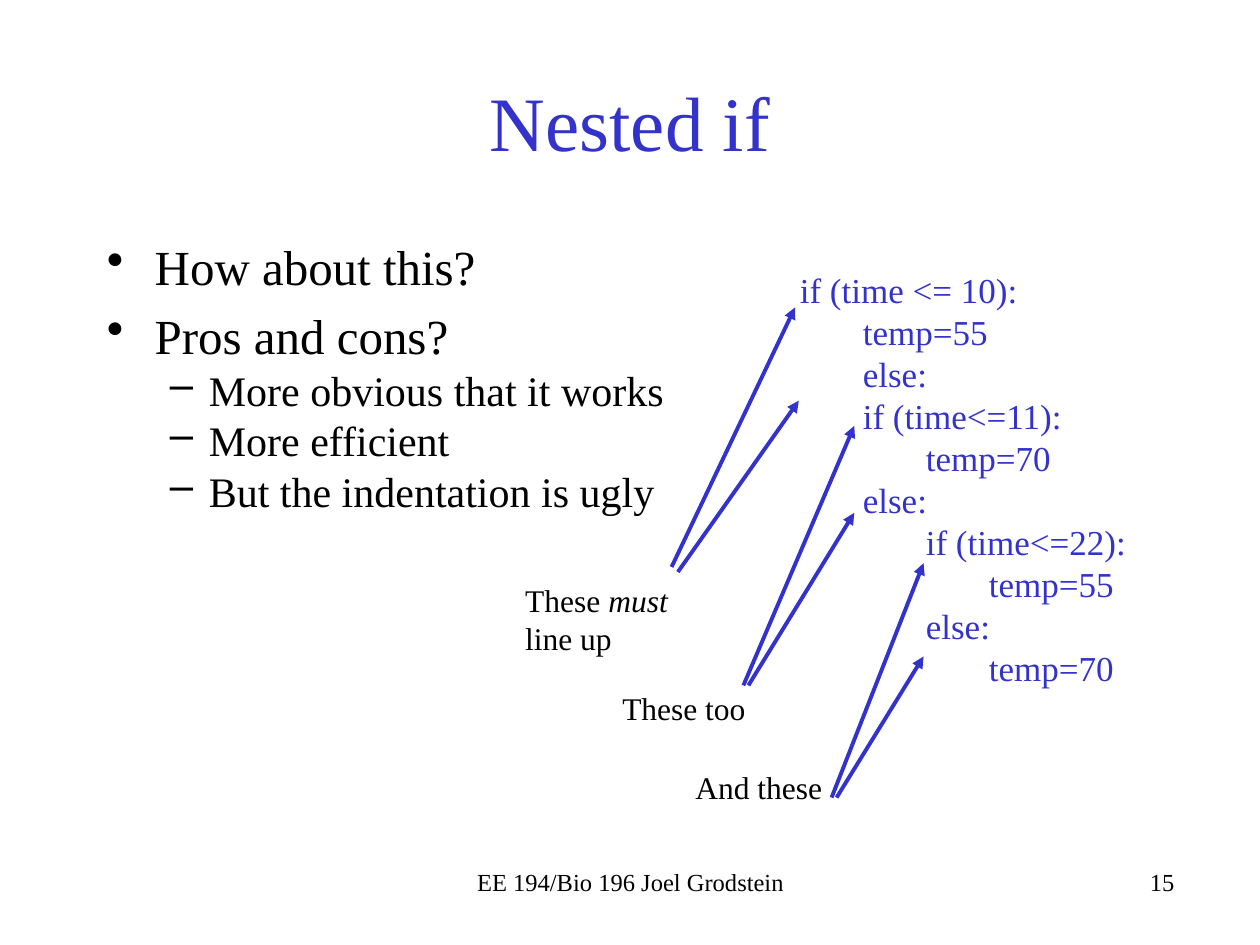
from dataclasses import dataclass

from lxml.etree import SubElement
from pptx import Presentation
from pptx.dml.color import RGBColor
from pptx.enum.shapes import MSO_CONNECTOR
from pptx.enum.text import MSO_ANCHOR, MSO_AUTO_SIZE, PP_ALIGN
from pptx.oxml.ns import qn
from pptx.slide import Slide
from pptx.text.text import TextFrame, _Paragraph as Paragraph
from pptx.util import Inches, Pt

FONT = "Times New Roman"
BLUE = RGBColor(0x33, 0x33, 0xCC)
BLACK = RGBColor(0, 0, 0)
CODE_INDENT = 0.5

Box = tuple[float, float, float, float]
Point = tuple[float, float]


@dataclass
class Line:
    """One paragraph; indents are in inches, space before in points."""
    text: str
    size: float
    margin: float = 0
    hanging: float = 0
    bullet: str = ""
    space_before: float = 0


@dataclass
class Callout:
    """A label with arrows to the code lines that must align."""
    text: str
    box: Box
    arrows: list[tuple[Point, Point]]


BULLETS = [
    *(Line(text, 28, 0.38, 0.38, "•", 5.6)
      for text in ("How about this?", "Pros and cons?")),
    *(Line(text, 24, 0.81, 0.31, "–")
      for text in ("More obvious that it works", "More efficient",
                   "But the indentation is ugly")),
]

CODE = [
    Line(text, 20, CODE_INDENT * depth)
    for depth, text in (
        (0, "if (time <= 10):"),
        (1, "temp=55"),
        (1, "else:"),
        (1, "if (time<=11):"),
        (2, "temp=70"),
        (1, "else:"),
        (2, "if (time<=22):"),
        (3, "temp=55"),
        (2, "else:"),
        (3, "temp=70"),
    )
]

CALLOUTS = [
    Callout("These *must* line up", (4.07, 4.56, 1.38, 0.71),
            [((5.33, 4.5), (6.31, 2.44)), ((5.38, 4.54), (6.34, 3.18))]),
    Callout("These too", (4.84, 5.42, 1.38, 0.4),
            [((5.9, 5.44), (6.78, 3.38)), ((5.94, 5.44), (6.78, 4.07))]),
    Callout("And these", (5.42, 6.05, 1.38, 0.4),
            [((6.6, 6.33), (7.33, 4.47)), ((6.64, 6.33), (7.33, 5.21))]),
]


def write_runs(paragraph: Paragraph, text: str, *, size: float,
               color: RGBColor = BLACK) -> None:
    """Write text into a paragraph, with *starred* parts in italics."""
    for index, part in enumerate(text.split("*")):
        run = paragraph.add_run()
        run.text = part
        run.font.name = FONT
        run.font.size = Pt(size)
        run.font.color.rgb = color
        run.font.italic = index % 2 == 1


def write_lines(frame: TextFrame, lines: list[Line], *,
                color: RGBColor = BLACK,
                align: PP_ALIGN = PP_ALIGN.LEFT) -> None:
    for index, line in enumerate(lines):
        paragraph = frame.add_paragraph() if index else frame.paragraphs[0]
        paragraph.alignment = align
        paragraph.space_before = Pt(line.space_before)
        properties = paragraph._p.get_or_add_pPr()
        properties.set("marL", str(Inches(line.margin)))
        properties.set("indent", str(-Inches(line.hanging)))
        if line.bullet:
            SubElement(properties, qn("a:buChar")).set("char", line.bullet)
        write_runs(paragraph, line.text, size=line.size, color=color)


def add_text(slide: Slide, box: Box, lines: list[Line], *,
             color: RGBColor = BLACK,
             align: PP_ALIGN = PP_ALIGN.LEFT) -> None:
    frame = slide.shapes.add_textbox(*map(Inches, box)).text_frame
    frame.word_wrap = True
    write_lines(frame, lines, color=color, align=align)


def add_title(slide: Slide, text: str, box: Box) -> None:
    title = slide.shapes.title
    title.left, title.top, title.width, title.height = map(Inches, box)
    title.text_frame.auto_size = MSO_AUTO_SIZE.NONE
    title.text_frame.vertical_anchor = MSO_ANCHOR.MIDDLE
    write_lines(title.text_frame, [Line(text, 44)], color=BLUE,
                align=PP_ALIGN.CENTER)


def add_arrow(slide: Slide, start: Point, end: Point) -> None:
    arrow = slide.shapes.add_connector(
        MSO_CONNECTOR.STRAIGHT, *map(Inches, start + end))
    arrow.line.color.rgb = BLUE
    arrow.line.width = Pt(2.25)
    SubElement(arrow.line._get_or_add_ln(), qn("a:tailEnd")).set("type", "triangle")
    SubElement(arrow._element.spPr, qn("a:effectLst"))


def main() -> None:
    presentation = Presentation()
    presentation.slide_width = Inches(10)
    presentation.slide_height = Inches(7.5)
    title_only = presentation.slide_layouts[5]
    slide = presentation.slides.add_slide(title_only)

    add_title(slide, "Nested if", (0.75, 0.33, 8.5, 1.25))
    add_text(slide, (0.75, 1.83, 4.83, 4.83), BULLETS)
    add_text(slide, (6.25, 2.08, 3.33, 3.47), CODE, color=BLUE)
    for callout in CALLOUTS:
        add_text(slide, callout.box, [Line(callout.text, 18)])
        for start, end in callout.arrows:
            add_arrow(slide, start, end)
    add_text(slide, (3.42, 6.83, 3.17, 0.5),
             [Line("EE 194/Bio 196 Joel Grodstein", 14)], align=PP_ALIGN.CENTER)
    add_text(slide, (6.25, 6.83, 3.17, 0.5), [Line("15", 14)],
             align=PP_ALIGN.RIGHT)
    presentation.save("out.pptx")


if __name__ == "__main__":
    main()
